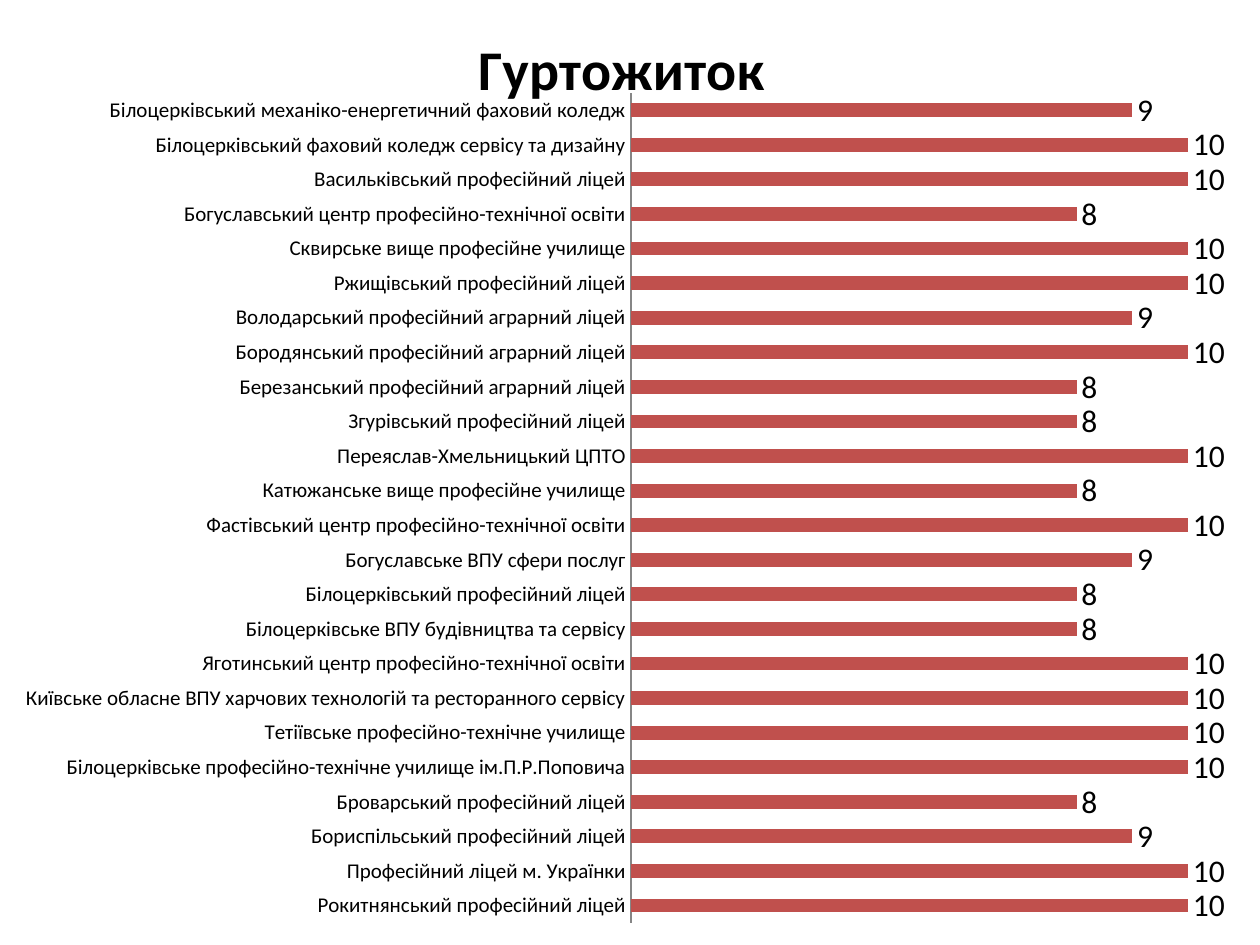
from lxml import etree
from pptx import Presentation
from pptx.chart.data import CategoryChartData
from pptx.dml.color import RGBColor
from pptx.enum.chart import XL_CHART_TYPE, XL_LABEL_POSITION, XL_TICK_MARK
from pptx.oxml.ns import qn
from pptx.util import Pt

BAR = XL_CHART_TYPE.BAR_CLUSTERED
OUTSIDE = XL_LABEL_POSITION.OUTSIDE_END
NO_TICK = XL_TICK_MARK.NONE
BLANK_LAYOUT = 6
SCALE = 914400 / 126
CHART_WIDTH = 1275
CHART_HEIGHT = 945
FONT = "Calibri"
COLORS = {"text": "000000", "bar": "C0504D", "axis": "868686"}
TITLE = "Гуртожиток"
SCORES = [
    ("Рокитнянський професійний ліцей", 10),
    ("Професійний ліцей м. Українки", 10),
    ("Бориспільський професійний ліцей", 9),
    ("Броварський професійний ліцей", 8),
    ("Білоцерківське професійно-технічне училище ім.П.Р.Поповича", 10),
    ("Тетіївське професійно-технічне училище", 10),
    ("Київське обласне ВПУ харчових технологій та ресторанного сервісу", 10),
    ("Яготинський центр професійно-технічної освіти", 10),
    ("Білоцерківське ВПУ будівництва та сервісу", 8),
    ("Білоцерківський професійний ліцей", 8),
    ("Богуславське ВПУ сфери послуг", 9),
    ("Фастівський центр професійно-технічної освіти", 10),
    ("Катюжанське вище професійне училище", 8),
    ("Переяслав-Хмельницький ЦПТО", 10),
    ("Згурівський професійний ліцей", 8),
    ("Березанський професійний аграрний ліцей", 8),
    ("Бородянський професійний аграрний ліцей", 10),
    ("Володарський професійний аграрний ліцей", 9),
    ("Ржищівський професійний ліцей", 10),
    ("Сквирське вище професійне училище", 10),
    ("Богуславський центр професійно-технічної освіти", 8),
    ("Васильківський професійний ліцей", 10),
    ("Білоцерківський фаховий коледж сервісу та дизайну", 10),
    ("Білоцерківський механіко-енергетичний фаховий коледж", 9),
]


def px(length):
    """Turn pixels into EMU."""
    return round(length * SCALE)


def color(name):
    """Return a named colour."""
    return RGBColor.from_string(COLORS[name])


def style_font(font, size, bold=False):
    """Set the typeface, size, weight and colour of a font."""
    font.name = FONT
    font.size = Pt(size)
    font.bold = bold
    font.color.rgb = color("text")


def set_layout(parent, position, **settings):
    """Place a title or plot area by pixels inside the chart."""
    for old_layout in parent.findall(qn("c:layout")):
        parent.remove(old_layout)
    layout = etree.Element(qn("c:layout"))
    manual = etree.SubElement(layout, qn("c:manualLayout"))
    extents = {"x": CHART_WIDTH, "y": CHART_HEIGHT, "w": CHART_WIDTH, "h": CHART_HEIGHT}
    fractions = {tag: length / extents[tag] for tag, length in position.items()}
    values = {**settings, "xMode": "edge", "yMode": "edge", **fractions}
    for tag, value in values.items():
        etree.SubElement(manual, qn(f"c:{tag}")).set("val", str(value))
    text = parent.find(qn("c:tx"))
    parent.insert(0 if text is None else 1, layout)


def add_bar_chart(slide):
    """Add the score chart over the whole slide."""
    data = CategoryChartData()
    data.categories = [name for name, score in SCORES]
    data.add_series("Series 1", [score for name, score in SCORES])
    frame = slide.shapes.add_chart(
        BAR, px(-15), px(0), px(CHART_WIDTH), px(CHART_HEIGHT), data
    )
    chart = frame.chart
    style_font(chart.font, 18)
    chart.has_legend = False
    return chart


def style_title(chart):
    """Write and place the chart title."""
    chart.has_title = True
    title = chart.chart_title
    run = title.text_frame.paragraphs[0].add_run()
    run.text = TITLE
    style_font(run.font, 32, bold=True)
    title.include_in_layout = False
    set_layout(title._element, {"x": 483, "y": 20})


def style_axes(chart):
    """Show the category axis and hide the value axis."""
    category_axis = chart.category_axis
    style_font(category_axis.tick_labels.font, 12)
    category_axis.major_tick_mark = NO_TICK
    category_axis.minor_tick_mark = NO_TICK
    category_axis.format.line.color.rgb = color("axis")
    value_axis = chart.value_axis
    value_axis.minimum_scale = 0
    value_axis.maximum_scale = 10
    value_axis.has_major_gridlines = False
    value_axis.visible = False


def style_bars(chart):
    """Format the bars, their labels and the plot area."""
    plot = chart.plots[0]
    plot.gap_width = 150
    plot.overlap = -25
    plot.vary_by_categories = False
    fill = plot.series[0].format.fill
    fill.solid()
    fill.fore_color.rgb = color("bar")
    plot.has_data_labels = True
    labels = plot.data_labels
    labels.show_value = True
    labels.position = OUTSIDE
    style_font(labels.font, 18)
    plot_area = chart._chartSpace.chart.plotArea
    position = {"x": 646, "y": 93, "w": 557, "h": 830}
    set_layout(plot_area, position, layoutTarget="inner")


def main():
    """Build and save the slide."""
    presentation = Presentation()
    presentation.slide_width = px(1260)
    presentation.slide_height = px(945)
    slide = presentation.slides.add_slide(presentation.slide_layouts[BLANK_LAYOUT])
    chart = add_bar_chart(slide)
    style_title(chart)
    style_axes(chart)
    style_bars(chart)
    presentation.save("out.pptx")


if __name__ == "__main__":
    main()
